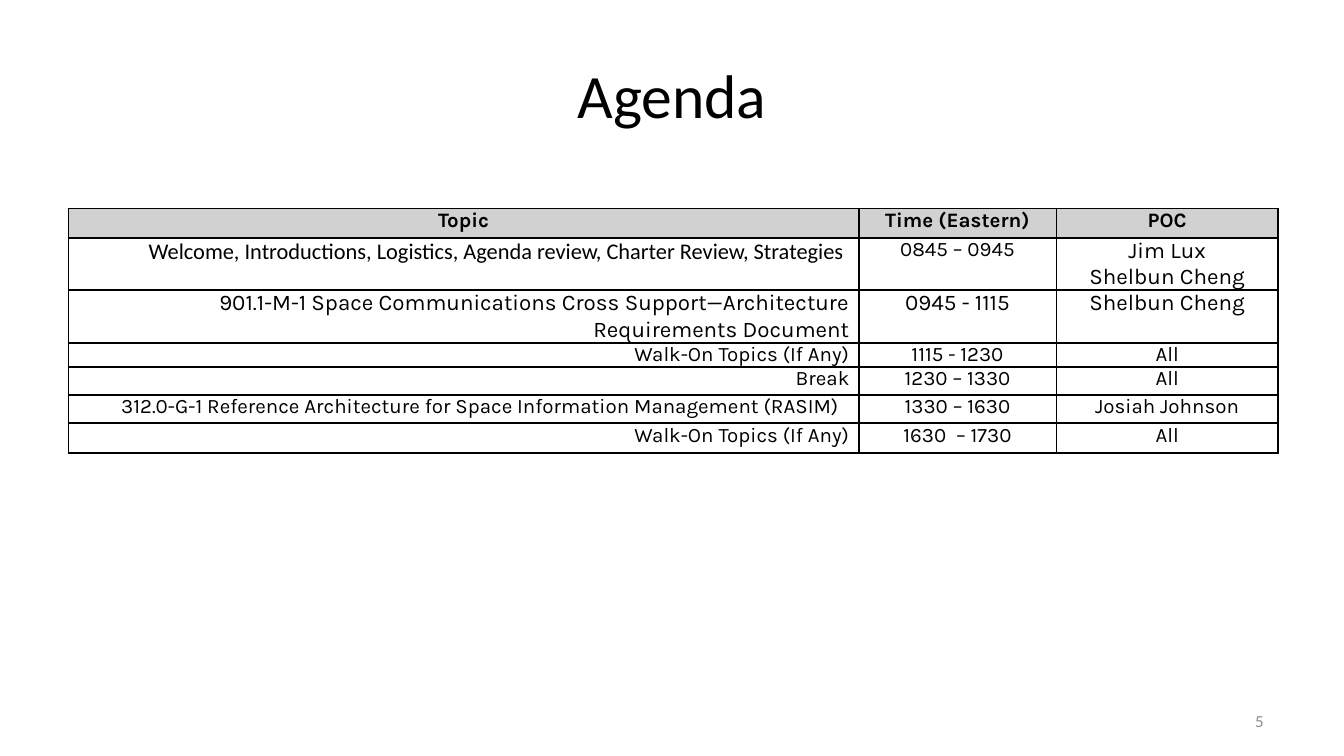
"""Build the agenda slide with its timetable."""
from dataclasses import dataclass

from lxml import etree
from pptx import Presentation
from pptx.dml.color import RGBColor
from pptx.enum.text import MSO_ANCHOR, PP_ALIGN
from pptx.oxml.ns import qn
from pptx.util import Inches, Pt

CENTER, RIGHT = PP_ALIGN.CENTER, PP_ALIGN.RIGHT
TOP, MIDDLE = MSO_ANCHOR.TOP, MSO_ANCHOR.MIDDLE


@dataclass(frozen=True)
class Theme:
    heading_font: str = "Calibri"
    table_font: str = "Karla"
    ink: str = "000000"
    muted: str = "8C8C8C"
    header_fill: str = "D1D1D1"
    title_size: int = 33
    large_size: int = 12
    table_size: int = 11
    number_size: int = 9
    border_width: int = 1


theme = Theme()


def add_text(p, text, font, size, color, align, bold=False):
    p.alignment = align
    r = p.add_run()
    r.text = text
    r.font.name = font
    r.font.size = Pt(size)
    r.font.bold = bold
    r.font.color.rgb = RGBColor.from_string(color)


def add_borders(cell):
    tc_pr = cell._tc.get_or_add_tcPr()
    for side in ("a:lnL", "a:lnR", "a:lnT", "a:lnB"):
        ln = etree.SubElement(tc_pr, qn(side), w=str(Pt(theme.border_width)))
        fill = etree.SubElement(ln, qn("a:solidFill"))
        etree.SubElement(fill, qn("a:srgbClr"), val=theme.ink)


prs = Presentation()
prs.slide_width, prs.slide_height = Inches(10), Inches(10 * 9 / 16)
s = prs.slides.add_slide(prs.slide_layouts[5])

title = s.shapes.title
title.left, title.top = Inches(0.5), Inches(0.23)
title.width, title.height = Inches(9), Inches(0.94)
tf = title.text_frame
tf.vertical_anchor = MIDDLE
add_text(tf.paragraphs[0], "Agenda", theme.heading_font, theme.title_size, theme.ink, CENTER)

karla, calibri = theme.table_font, theme.heading_font
small, large = theme.table_size, theme.large_size
agenda = [
    (0.22, (small, small, small), ("Topic", "Time (Eastern)", "POC")),
    (0.39, (large, small, large),
     ("Welcome, Introductions, Logistics, Agenda review, Charter Review, Strategies ",
      "0845 – 0945", "Jim Lux\nShelbun Cheng")),
    (0.39, (large, large, large),
     ("901.1-M-1 Space Communications Cross Support—Architecture Requirements Document",
      "0945 - 1115", "Shelbun Cheng")),
    (0.18, (small, small, small), ("Walk-On Topics (If Any)", "1115 - 1230", "All")),
    (0.21, (small, small, small), ("Break", "1230 – 1330", "All")),
    (0.21, (small, small, small),
     ("312.0-G-1 Reference Architecture for Space Information Management (RASIM)  ",
      "1330 – 1630", "Josiah Johnson")),
    (0.22, (small, small, small), ("Walk-On Topics (If Any)", "1630  – 1730", "All")),
]
col_widths = (5.88, 1.47, 1.65)
table = s.shapes.add_table(
    len(agenda), len(col_widths), Inches(0.51), Inches(1.55),
    Inches(sum(col_widths)), Inches(sum(row[0] for row in agenda))).table
table.horz_banding = False
for column, width in zip(table.columns, col_widths):
    column.width = Inches(width)

for i, (height, sizes, texts) in enumerate(agenda):
    table.rows[i].height = Inches(height)
    for j, (size, text) in enumerate(zip(sizes, texts)):
        cell = table.cell(i, j)
        cell.margin_left = cell.margin_right = Inches(0.07)
        cell.margin_top = cell.margin_bottom = 0
        cell.vertical_anchor = TOP
        add_borders(cell)
        if i == 0:
            cell.fill.solid()
            cell.fill.fore_color.rgb = RGBColor.from_string(theme.header_fill)
        else:
            cell.fill.background()
        tf = cell.text_frame
        align = RIGHT if i > 0 and j == 0 else CENTER
        font = calibri if (i, j) == (1, 0) else karla
        for n, line in enumerate(text.split("\n")):
            p = tf.add_paragraph() if n else tf.paragraphs[0]
            add_text(p, line, font, size, theme.ink, align, bold=i == 0)

number = s.shapes.add_textbox(Inches(7.17), Inches(5.21), Inches(2.33), Inches(0.3))
tf = number.text_frame
tf.word_wrap = True
tf.vertical_anchor = MIDDLE
add_text(tf.paragraphs[0], "5", theme.heading_font, theme.number_size, theme.muted, RIGHT)

prs.save("out.pptx")
